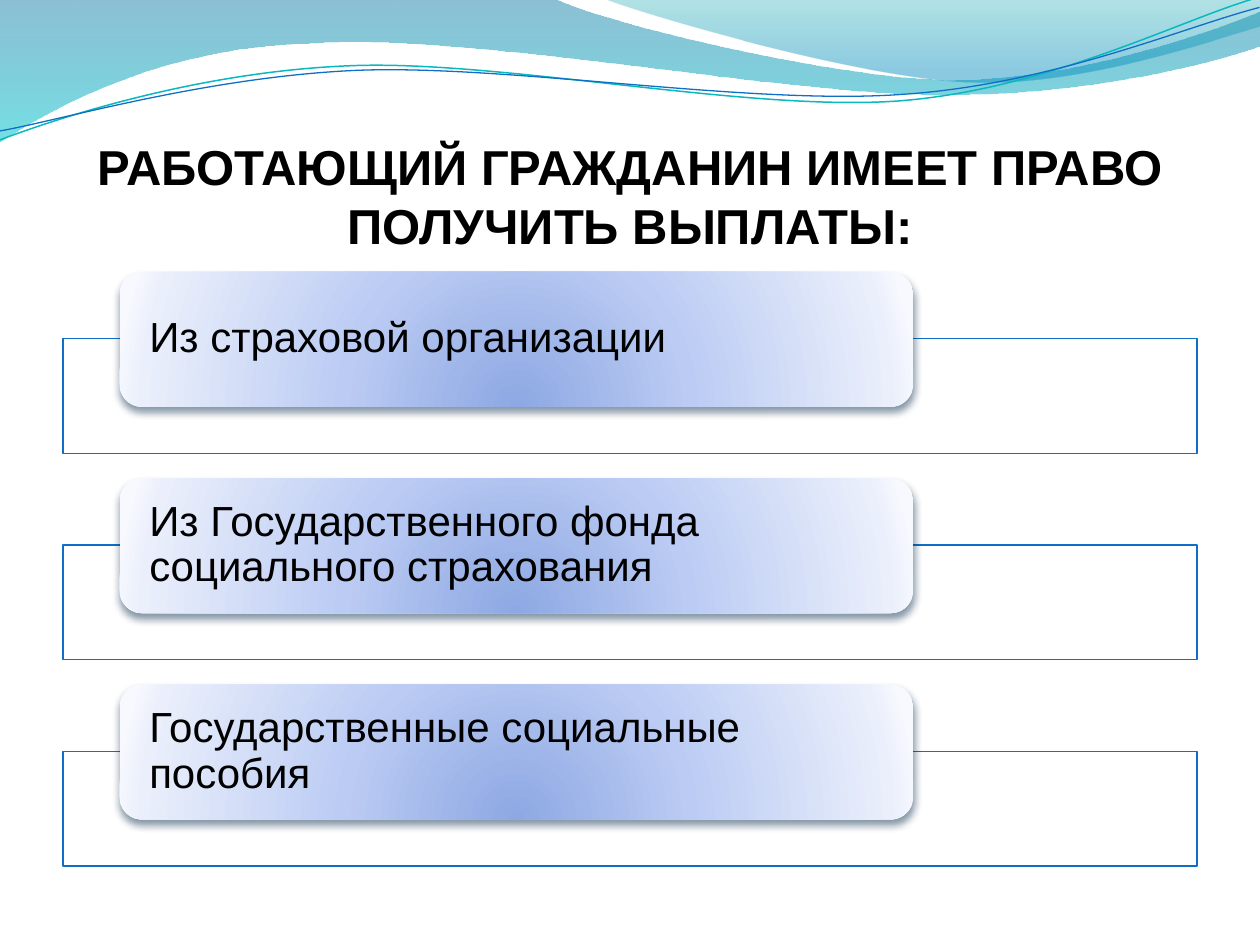
from dataclasses import dataclass
from typing import NamedTuple

from lxml.etree import SubElement
from pptx import Presentation
from pptx.dml.color import RGBColor
from pptx.enum.shapes import MSO_SHAPE
from pptx.enum.text import MSO_ANCHOR, MSO_AUTO_SIZE, PP_ALIGN
from pptx.oxml.ns import qn
from pptx.util import Cm, Pt


class Stop(NamedTuple):
    position: int
    color: str
    opacity: int = 100


class Curve(NamedTuple):
    first_control: tuple[float, float]
    second_control: tuple[float, float]
    end: tuple[float, float]


class Line(NamedTuple):
    end: tuple[float, float]


@dataclass(frozen=True)
class Outline:
    start: tuple[float, float]
    pieces: tuple[Curve | Line, ...]


@dataclass(frozen=True)
class Wave:
    outline: Outline
    stops: tuple[Stop, ...]


@dataclass(frozen=True)
class Strand:
    outline: Outline
    color: str
    width: float


@dataclass(frozen=True)
class Theme:
    font: str = "Arial"
    title_size: int = 28
    card_size: int = 24
    text: str = "000000"
    frame_fill: str = "FFFFFF"
    frame_opacity: int = 90
    frame_line: str = "0F6FC6"
    frame_width: float = 0.75
    strand_teal: str = "0AB8BF"
    shadow: str = "042747"
    shadow_opacity: int = 48
    card_stops: tuple[Stop, ...] = (
        Stop(0, "8DA8E3"), Stop(43, "BBCBF3"), Stop(93, "EAEFFB"), Stop(100, "F7F9FF"),
    )
    wave_stops: tuple[Stop, ...] = (Stop(0, "0074A1", 45), Stop(100, "00C6CF", 55))
    crest_stops: tuple[Stop, ...] = (Stop(0, "00A1A9", 30), Stop(80, "008BBF", 45))


THEME = Theme()
STRAND_ROTATION = 357.3
CARD_TOP = 5.48
CARD_PITCH = 4.16
FRAME_OFFSET = 1.35

TITLE = "РАБОТАЮЩИЙ ГРАЖДАНИН ИМЕЕТ ПРАВО ПОЛУЧИТЬ ВЫПЛАТЫ:"
CARDS = (
    "Из страховой организации",
    "Из Государственного фонда социального страхования",
    "Государственные социальные пособия",
)

WAVES = (
    Wave(Outline((0, 0), (
        Line((11.18, -0.03)),
        Curve((12.09, 0.43), (16.87, 1.6), (19.25, 1.6)),
        Curve((21.67, 1.6), (24.33, 0.66), (25.4, 0.23)),
        Line((25.43, 0.91)),
        Curve((24.97, 1.12), (22.1, 1.93), (18.95, 1.91)),
        Curve((15.8, 1.91), (9.7, 0.71), (6.53, 0.86)),
        Curve((3.28, 0.91), (1.17, 2.11), (-0.03, 2.87)),
    )), THEME.wave_stops),
    Wave(Outline((12.17, -0.03), (
        Curve((12.93, 0.28), (17.32, 1.57), (19.53, 1.65)),
        Curve((21.74, 1.75), (24.41, 0.81), (25.4, 0.53)),
        Line((25.4, 0)),
    )), THEME.crest_stops),
)
STRANDS = (
    Strand(Outline((-0.05, 2.22), (
        Curve((1.19, 1.82), (4.02, 1.04), (7.05, 1.06)),
        Curve((10.05, 1.07), (15.02, 2.37), (18.08, 2.29)),
        Curve((21.13, 2.2), (23.86, 0.91), (25.41, 0.55)),
    )), THEME.strand_teal, 0.85),
    Strand(Outline((-0.04, 2.04), (
        Curve((1.16, 1.89), (4.17, 1.15), (7.2, 1.16)),
        Curve((10.25, 1.18), (15.13, 2.25), (18.19, 2.16)),
        Curve((21.22, 2.1), (23.93, 1.06), (25.44, 0.75)),
    )), THEME.frame_line, 0.75),
)


def add_color(parent, color: str, opacity: int) -> None:
    element = SubElement(parent, qn("a:srgbClr"), val=color)
    if opacity < 100:
        SubElement(element, qn("a:alpha"), val=str(opacity * 1000))


def fill_gradient(shape, stops: tuple[Stop, ...], radial: bool = False) -> None:
    shape.fill.solid()
    properties = shape.element.spPr
    solid = properties.find(qn("a:solidFill"))
    gradient = SubElement(properties, qn("a:gradFill"), rotWithShape="1")
    stop_list = SubElement(gradient, qn("a:gsLst"))
    for stop in stops:
        element = SubElement(stop_list, qn("a:gs"), pos=str(stop.position * 1000))
        add_color(element, stop.color, stop.opacity)
    if radial:
        circle = SubElement(gradient, qn("a:path"), path="circle")
        SubElement(circle, qn("a:fillToRect"), l="50000", t="130000", r="50000", b="-30000")
    else:
        SubElement(gradient, qn("a:lin"), ang="5400000", scaled="0")
    properties.replace(solid, gradient)


def set_line(shape, color: str, width: float) -> None:
    shape.line.color.rgb = RGBColor.from_string(color)
    shape.line.width = Pt(width)


def draw_outline(shapes, outline: Outline, close: bool):
    builder = shapes.build_freeform(*map(Cm, outline.start))
    points = [tuple(map(Cm, point)) for piece in outline.pieces for point in piece]
    builder.add_line_segments(points, close=close)
    shape = builder.convert_to_shape()
    shape.shadow.inherit = False
    segments = iter(list(shape.element.iter(qn("a:lnTo"))))
    for piece in outline.pieces:
        segment = next(segments)
        if isinstance(piece, Curve):
            parent = segment.getparent()
            curve = SubElement(parent, qn("a:cubicBezTo"))
            parent.replace(segment, curve)
            curve.append(segment[0])
            for follower in (next(segments), next(segments)):
                curve.append(follower[0])
                parent.remove(follower)
    return shape


def draw_wave(shapes, wave: Wave) -> None:
    shape = draw_outline(shapes, wave.outline, close=True)
    fill_gradient(shape, wave.stops)
    shape.line.fill.background()


def draw_strand(shapes, strand: Strand) -> None:
    shape = draw_outline(shapes, strand.outline, close=False)
    shape.rotation = STRAND_ROTATION
    shape.fill.background()
    set_line(shape, strand.color, strand.width)


def write_text(box, text: str, *, size: int, bold: bool = False, align=PP_ALIGN.LEFT,
               anchor=MSO_ANCHOR.MIDDLE, insets=(0, 0, 0, 0), spacing: float = 1.0) -> None:
    frame = box.text_frame
    frame.word_wrap = True
    frame.auto_size = MSO_AUTO_SIZE.NONE
    frame.vertical_anchor = anchor
    frame.margin_left, frame.margin_top, frame.margin_right, frame.margin_bottom = map(Cm, insets)
    para = frame.paragraphs[0]
    para.alignment = align
    para.line_spacing = spacing
    span = para.add_run()
    span.text = text
    span.font.name = THEME.font
    span.font.size = Pt(size)
    span.font.bold = bold
    span.font.color.rgb = RGBColor.from_string(THEME.text)


def draw_frame(shapes, top: float) -> None:
    box = shapes.add_shape(MSO_SHAPE.RECTANGLE, Cm(1.27), Cm(top), Cm(22.86), Cm(2.31))
    box.shadow.inherit = False
    box.fill.solid()
    box.fill.fore_color.rgb = RGBColor.from_string(THEME.frame_fill)
    color = box.element.spPr.find(qn("a:solidFill"))[0]
    SubElement(color, qn("a:alpha"), val=str(THEME.frame_opacity * 1000))
    set_line(box, THEME.frame_line, THEME.frame_width)


def draw_card(shapes, text: str, top: float) -> None:
    area = Cm(2.41), Cm(top), Cm(16), Cm(2.72)
    card = shapes.add_shape(MSO_SHAPE.ROUNDED_RECTANGLE, *area)
    fill_gradient(card, THEME.card_stops, radial=True)
    card.line.fill.background()
    card.shadow.inherit = False
    effects = card.element.spPr.find(qn("a:effectLst"))
    shadow = SubElement(effects, qn("a:outerShdw"), blurRad=str(Pt(4.5)), dist=str(Pt(3)),
                        dir="5400000", rotWithShape="0")
    add_color(shadow, THEME.shadow, THEME.shadow_opacity)
    label = shapes.add_textbox(*area)
    write_text(label, text, size=THEME.card_size, insets=(0.6, 0, 0.6, 0), spacing=0.9)


def main() -> None:
    deck = Presentation()
    deck.slide_width, deck.slide_height = Cm(25.4), Cm(19.05)
    page = deck.slides.add_slide(deck.slide_layouts[5])
    for wave in WAVES:
        draw_wave(page.shapes, wave)
    strands = page.shapes.add_group_shape().shapes
    for strand in STRANDS:
        draw_strand(strands, strand)
    title = page.shapes.title
    title.left, title.top, title.width, title.height = Cm(1.27), Cm(1.96), Cm(22.86), Cm(3.17)
    write_text(title, TITLE, size=THEME.title_size, bold=True, align=PP_ALIGN.CENTER,
               anchor=MSO_ANCHOR.BOTTOM, insets=(0, 0.13, 0, 0))
    cards = page.shapes.add_group_shape().shapes
    for index, text in enumerate(CARDS):
        top = CARD_TOP + index * CARD_PITCH
        draw_frame(cards, top + FRAME_OFFSET)
        draw_card(cards, text, top)
    deck.save("out.pptx")


if __name__ == "__main__":
    main()
